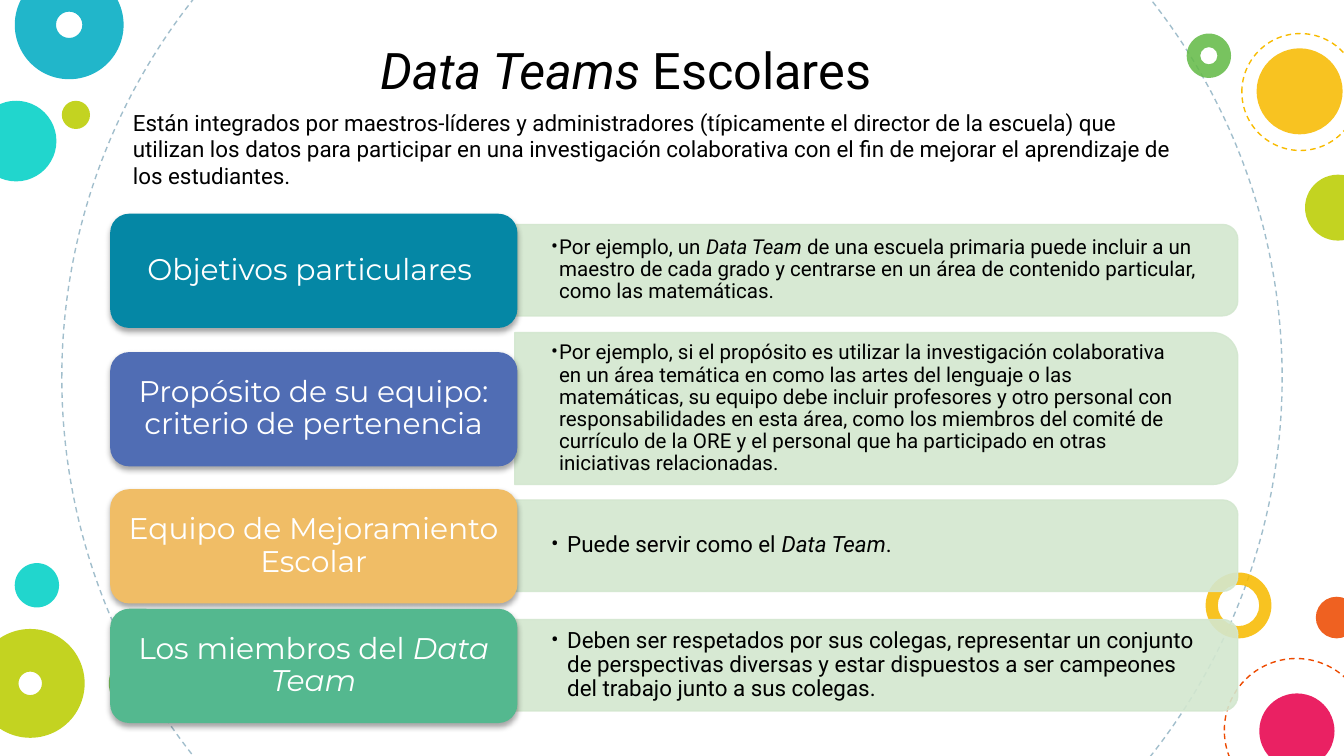
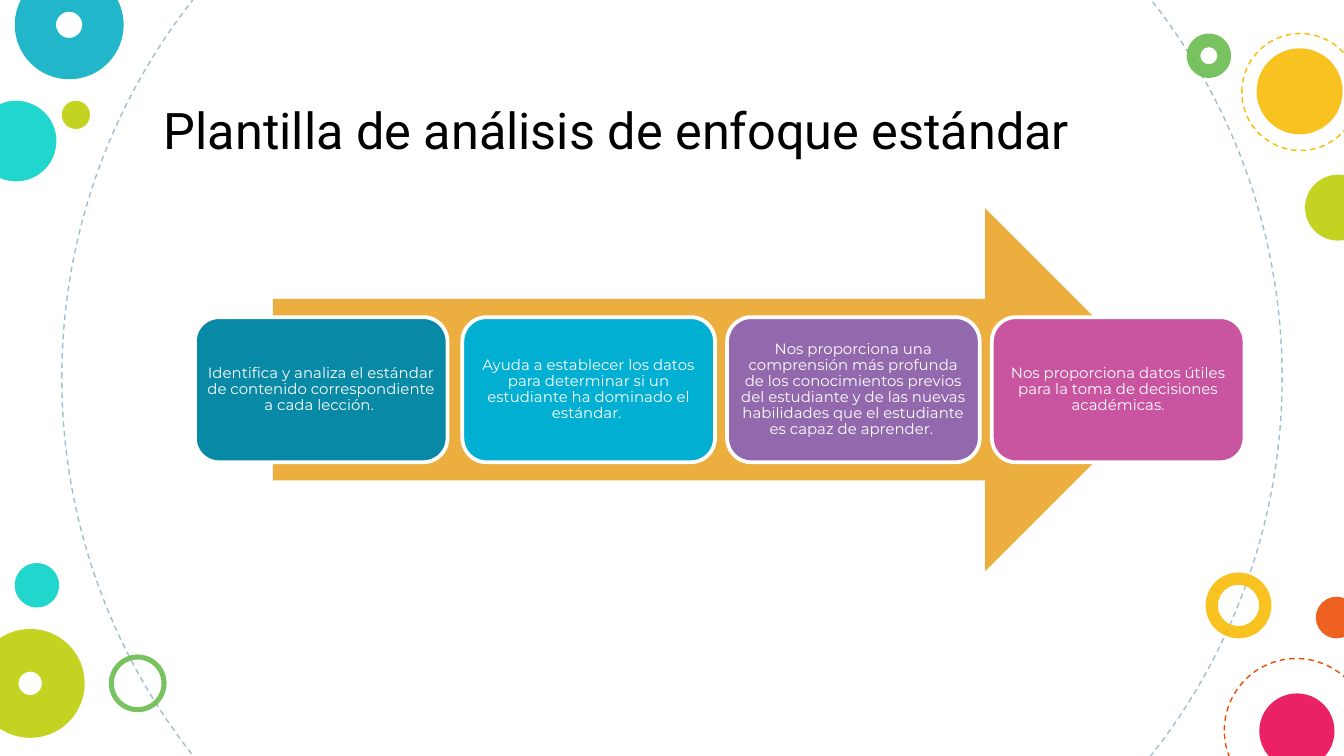
from dataclasses import dataclass
from typing import Optional

from lxml.etree import SubElement
from pptx import Presentation
from pptx.dml.color import RGBColor
from pptx.enum.dml import MSO_LINE
from pptx.enum.shapes import MSO_SHAPE
from pptx.enum.text import MSO_ANCHOR, PP_ALIGN
from pptx.oxml.ns import qn
from pptx.util import Inches, Pt

BLACK, WHITE, PANEL = "000000", "FFFFFF", "D3E7CF"
TEAL, YELLOW, CYAN, LIME = "00D1C6", "F8BB00", "00ACC3", "BBCD00"
GREEN, ORANGE, PINK, GREY = "65BB48", "ED4A00", "E8004C", "A1BECC"
BODY_FONT, LABEL_FONT = "Roboto", "Montserrat"
TITLE_SIZE = 27


@dataclass
class Circle:
    x: float
    y: float
    size: float
    color: str
    ring: Optional[float] = None  # ring thickness of a donut
    dashed: bool = False


@dataclass
class Row:
    label: str
    color: str
    detail: str
    middle: float
    height: float = 0.68
    text_width: float = 5.35
    size: int = 11
    indent: float = 0.06


@dataclass
class Step:
    x: float
    color: str
    text: str


CIRCLES = [
    Circle(0.46, -1.73, 9.08, GREY, dashed=True),
    Circle(-0.18, 0.75, 0.6, TEAL),
    Circle(8.97, 4.26, 0.49, YELLOW, ring=0.186),
    Circle(0.11, -0.22, 0.81, CYAN, ring=0.379),
    Circle(0.46, 0.75, 0.21, LIME),
    Circle(9.11, 4.9, 1.07, ORANGE, dashed=True),
    Circle(0.81, 4.87, 0.43, GREEN, ring=0.088),
    Circle(9.79, 4.44, 0.31, ORANGE),
    Circle(-0.18, 4.68, 0.81, LIME, ring=0.392),
    Circle(9.37, 5.16, 0.56, PINK),
    Circle(8.83, 0.25, 0.33, GREEN, ring=0.306),
    Circle(9.35, 0.36, 0.64, YELLOW),
    Circle(9.71, 1.3, 0.49, LIME),
    Circle(9.24, 0.25, 0.87, YELLOW, dashed=True),
    Circle(0.11, 4.19, 0.33, TEAL),
]

# Asterisks enclose italic words
ROWS = [
    Row("Objetivos particulares ", "0587A5",
        "Por ejemplo, un *Data Team *de una escuela primaria puede incluir a un "
        "maestro de cada grado y centrarse en un área de contenido particular, "
        "como las matemáticas.", 2.01),
    Row("Propósito de su equipo: criterio de pertenencia", "506DB4",
        "Por ejemplo, si el propósito es utilizar la investigación colaborativa "
        "en un área temática en como las artes del lenguaje o las matemáticas, "
        "su equipo debe incluir profesores y otro personal con "
        "responsabilidades en esta área, como los miembros del comité de "
        "currículo de la ORE y el personal que ha participado en otras "
        "iniciativas relacionadas.", 3.04, height=1.13, text_width=5.31),
    Row("Equipo de Mejoramiento Escolar", "F0BD66",
        "Puede servir como el *Data Team*.", 4.06, size=12, indent=0.12),
    Row("Los miembros del *Data Team*", "54B88F",
        "Deben ser respetados por sus colegas, representar un conjunto de "
        "perspectivas diversas y estar dispuestos a ser campeones del trabajo "
        "junto a sus colegas.", 4.95, size=12, indent=0.12),
]

STEPS = [
    Step(1.45, "0889A6", "Identifica y analiza el estándar de contenido "
         "correspondiente a cada lección. "),
    Step(3.44, "00AFD2", "Ayuda a establecer los datos para determinar si un "
         "estudiante ha dominado el estándar. "),
    Step(5.41, "9369AE", "Nos proporciona una comprensión más profunda de los "
         "conocimientos previos del estudiante y de las nuevas habilidades que "
         "el estudiante es capaz de aprender. "),
    Step(7.38, "C955A0", "Nos proporciona datos útiles para la toma de "
         "decisiones académicas."),
]


def paint(fill, color: str, alpha: int = 100) -> None:
    """Apply a solid colour, with optional opacity in percent."""
    fill.solid()
    fill.fore_color.rgb = RGBColor.from_string(color)
    if alpha < 100:
        clr = fill._xPr.find(qn("a:solidFill"))[0]
        SubElement(clr, qn("a:alpha"), val=str(alpha * 1000))


def add_shape(slide, kind, x: float, y: float, w: float, h: float, *,
              fill: Optional[str] = None, line: Optional[str] = None,
              width: float = 0.75, alpha: int = 100, dashed: bool = False):
    sp = slide.shapes.add_shape(kind, Inches(x), Inches(y), Inches(w), Inches(h))
    sp.shadow.inherit = False
    if fill:
        paint(sp.fill, fill, alpha)
    else:
        sp.fill.background()
    if line:
        paint(sp.line.fill, line, alpha)
        sp.line.width = Pt(width)
        if dashed:
            sp.line.dash_style = MSO_LINE.DASH
    else:
        sp.line.fill.background()
    return sp


def add_shadow(sp) -> None:
    effects = sp._element.spPr.find(qn("a:effectLst"))
    shadow = SubElement(effects, qn("a:outerShdw"), blurRad=str(Pt(3.1)),
                        dist=str(Pt(1.8)), dir="5400000", rotWithShape="0")
    clr = SubElement(shadow, qn("a:srgbClr"), val=BLACK)
    SubElement(clr, qn("a:alpha"), val="35000")


def add_bullet(p, indent: float) -> None:
    pPr = p._p.get_or_add_pPr()
    pPr.set("marL", str(Inches(indent)))
    pPr.set("indent", str(-Inches(indent)))
    clr = SubElement(pPr, qn("a:buClr"))
    SubElement(clr, qn("a:srgbClr"), val=BLACK)
    SubElement(pPr, qn("a:buFont"), typeface=BODY_FONT)
    SubElement(pPr, qn("a:buChar"), char="•")


def write(sp, text: str, *, size: float, font: str = BODY_FONT,
          color: str = BLACK, align=PP_ALIGN.LEFT, anchor=MSO_ANCHOR.TOP,
          insets: tuple[float, float] = (0.1, 0.05), spacing: float = 1.0,
          bullet: Optional[float] = None) -> None:
    tf = sp.text_frame
    tf.word_wrap = True
    tf.vertical_anchor = anchor
    tf.margin_left = tf.margin_right = Inches(insets[0])
    tf.margin_top = tf.margin_bottom = Inches(insets[1])
    p = tf.paragraphs[0]
    p.alignment = align
    p.line_spacing = spacing
    if bullet is not None:
        add_bullet(p, bullet)
    for i, part in enumerate(text.split("*")):
        if part:
            r = p.add_run()
            r.text = part
            r.font.size = Pt(size)
            r.font.name = font
            r.font.italic = i % 2 == 1
            r.font.color.rgb = RGBColor.from_string(color)


def add_text(slide, text: str, x: float, y: float, w: float, h: float,
             **fmt) -> None:
    box = slide.shapes.add_textbox(Inches(x), Inches(y), Inches(w), Inches(h))
    write(box, text, **fmt)


def new_slide(prs):
    """Add a blank slide with the circles around its edge."""
    slide = prs.slides.add_slide(prs.slide_layouts[6])
    paint(slide.background.fill, WHITE)
    for c in CIRCLES:
        kind = MSO_SHAPE.DONUT if c.ring else MSO_SHAPE.OVAL
        if c.dashed:
            add_shape(slide, kind, c.x, c.y, c.size, c.size,
                      line=c.color, dashed=True)
            continue
        sp = add_shape(slide, kind, c.x, c.y, c.size, c.size,
                       fill=c.color, alpha=87)
        if c.ring:
            sp.adjustments[0] = c.ring
    return slide


def add_row(slide, row: Row) -> None:
    # Panel: a tall shape turned to lie on its side
    length, center = 5.38, 6.52
    panel = add_shape(slide, MSO_SHAPE.ROUND_2_SAME_RECTANGLE,
                      center - row.height / 2, row.middle - length / 2,
                      row.height, length, fill=PANEL, line=PANEL, alpha=90)
    panel.rotation = 90
    text_height = row.height - 0.08
    add_text(slide, row.detail, 3.83, row.middle - text_height / 2,
             row.text_width, text_height, size=row.size,
             anchor=MSO_ANCHOR.MIDDLE, insets=(0.27, 0.14), spacing=0.9,
             bullet=row.indent)
    # Coloured label
    label = add_shape(slide, MSO_SHAPE.ROUNDED_RECTANGLE, 0.82,
                      row.middle - 0.42, 3.03, 0.85, fill=row.color)
    add_shadow(label)
    write(label, row.label, size=16, font=LABEL_FONT, color=WHITE,
          align=PP_ALIGN.CENTER, anchor=MSO_ANCHOR.MIDDLE,
          insets=(0.07, 0.03), spacing=0.9)


def teams_slide(prs) -> None:
    slide = new_slide(prs)
    add_text(slide, "*Data Teams *Escolares", 2.73, 0.24, 5.84, 0.56,
             size=TITLE_SIZE)
    for row in ROWS:
        add_row(slide, row)
    add_text(slide, "Están integrados por maestros-líderes y administradores "
             "(típicamente el director de la escuela) que utilizan los datos "
             "para participar en una investigación colaborativa con el fin de "
             "mejorar el aprendizaje de los estudiantes.",
             0.89, 0.76, 8.05, 0.71, size=12)


def template_slide(prs) -> None:
    slide = new_slide(prs)
    add_shape(slide, MSO_SHAPE.RIGHT_ARROW, 2.03, 1.55, 6.65, 2.7, fill="EDAE40")
    for step in STEPS:
        card = add_shape(slide, MSO_SHAPE.ROUNDED_RECTANGLE, step.x, 2.36,
                         1.88, 1.08, fill=step.color, line=WHITE, width=2)
        write(card, step.text, size=8, font=LABEL_FONT, color=WHITE,
              align=PP_ALIGN.CENTER, anchor=MSO_ANCHOR.MIDDLE,
              insets=(0.03, 0.03), spacing=0.9)
    add_text(slide, "Plantilla de análisis de enfoque estándar",
             1.12, 0.69, 8.28, 0.56, size=TITLE_SIZE)


def main() -> None:
    prs = Presentation()
    # Widescreen, 16:9
    prs.slide_width = Inches(10)
    prs.slide_height = Inches(10 * 9 / 16)
    teams_slide(prs)
    template_slide(prs)
    prs.save("out.pptx")


if __name__ == "__main__":
    main()
